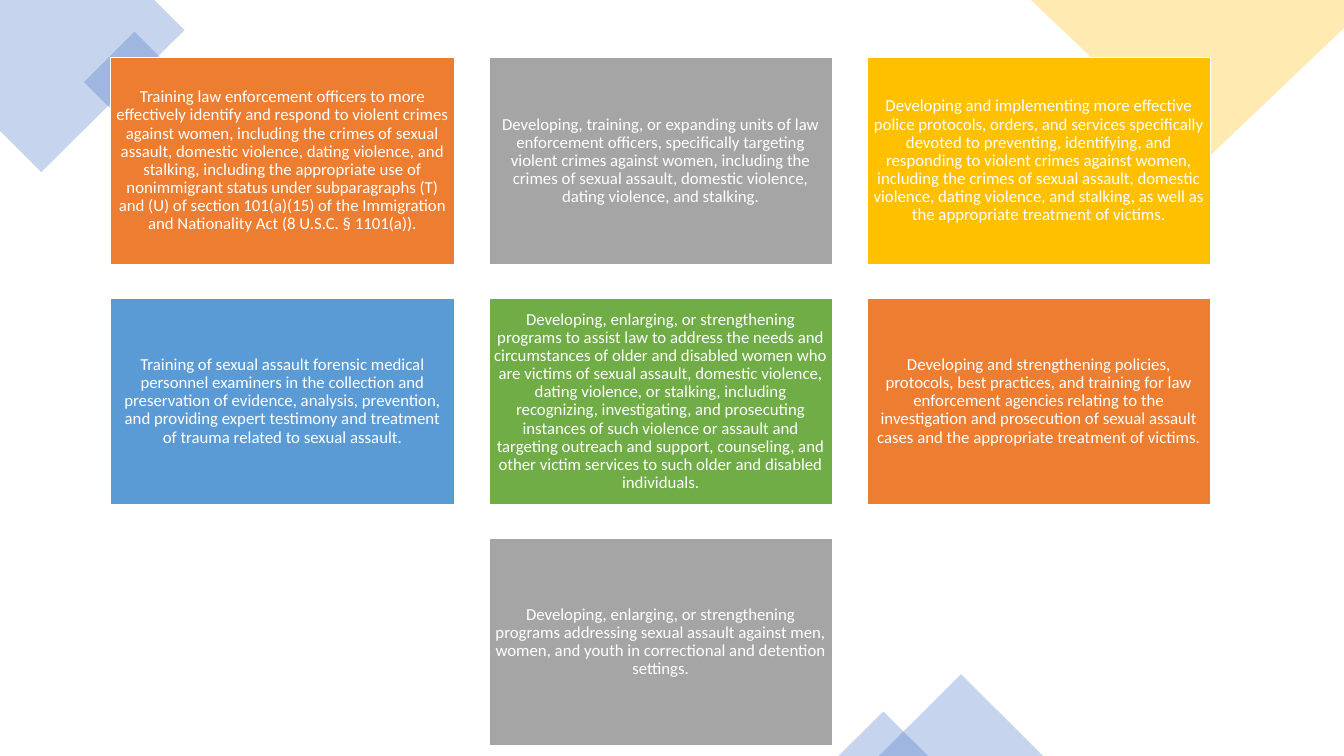
from lxml import etree
from pptx import Presentation
from pptx.dml.color import RGBColor
from pptx.enum.shapes import MSO_SHAPE
from pptx.enum.text import MSO_ANCHOR, PP_ALIGN
from pptx.oxml.ns import qn
from pptx.util import Cm, Pt


def rgb(color):
    return RGBColor.from_string(color)


def tint(sp, color):
    """Fill a decoration at 30 % opacity, without outline or shadow."""
    sp.shadow.inherit = False
    sp.fill.solid()
    sp.fill.fore_color.rgb = rgb(color)
    sp.line.fill.background()
    clr = sp.fill._xPr.find(qn("a:solidFill"))[0]
    etree.SubElement(clr, qn("a:alpha")).set("val", "30000")


prs = Presentation()
prs.slide_width, prs.slide_height = Cm(33.87), Cm(19.05)
s = prs.slides.add_slide(prs.slide_layouts[6])

# Top corners
corners = [
    ("4472C4", [(0, 0), (3.89, 0), (4.65, 0.76), (1.04, 4.34), (0, 3.3)]),
    ("FFC000", [(25.98, 0), (33.87, 0), (33.87, 0.71), (30.3, 4.11)]),
]
for color, points in corners:
    points = [(Cm(x), Cm(y)) for x, y in points]
    fb = s.shapes.build_freeform(*points[0])
    fb.add_line_segments(points[1:], close=True)
    tint(fb.convert_to_shape(), color)

# Small diamond and bottom triangles
accents = [
    (MSO_SHAPE.RECTANGLE, 2.49, 1.17, 1.8, 1.8, 315),
    (MSO_SHAPE.ISOSCELES_TRIANGLE, 22.15, 16.99, 4.14, 2.06, 0),
    (MSO_SHAPE.ISOSCELES_TRIANGLE, 21.13, 17.93, 2.26, 1.12, 0),
]
for kind, x, y, w, h, angle in accents:
    sp = s.shapes.add_shape(kind, Cm(x), Cm(y), Cm(w), Cm(h))
    sp.rotation = angle
    tint(sp, "4472C4")

# Purpose boxes: three per row, the last one centred
colors = ["ED7D31", "A5A5A5", "FFC000", "5B9BD5", "70AD47"]
purposes = [
    "Training law enforcement officers to more effectively identify and respond to "
    "violent crimes against women, including the crimes of sexual assault, domestic "
    "violence, dating violence, and stalking, including the appropriate use of "
    "nonimmigrant status under subparagraphs (T) and (U) of section 101(a)(15) of the "
    "Immigration and Nationality Act (8 U.S.C. § 1101(a)).",
    "Developing, training, or expanding units of law enforcement officers, specifically "
    "targeting violent crimes against women, including the crimes of sexual assault, "
    "domestic violence, dating violence, and stalking.",
    "Developing and implementing more effective police protocols, orders, and services "
    "specifically devoted to preventing, identifying, and responding to violent crimes "
    "against women, including the crimes of sexual assault, domestic violence, dating "
    "violence, and stalking, as well as the appropriate treatment of victims.",
    "Training of sexual assault forensic medical personnel examiners in the collection "
    "and preservation of evidence, analysis, prevention, and providing expert testimony "
    "and treatment of trauma related to sexual assault.",
    "Developing, enlarging, or strengthening programs to assist law to address the needs "
    "and circumstances of older and disabled women who are victims of sexual assault, "
    "domestic violence, dating violence, or stalking, including recognizing, "
    "investigating, and prosecuting instances of such violence or assault and targeting "
    "outreach and support, counseling, and other victim services to such older and "
    "disabled individuals.",
    "Developing and strengthening policies, protocols, best practices, and training for "
    "law enforcement agencies relating to the investigation and prosecution of sexual "
    "assault cases and the appropriate treatment of victims.",
    "Developing, enlarging, or strengthening programs addressing sexual assault against "
    "men, women, and youth in correctional and detention settings.",
]
for i, text in enumerate(purposes):
    row, col = divmod(i, 3)
    if i == len(purposes) - 1:
        col = 1
    sp = s.shapes.add_shape(MSO_SHAPE.RECTANGLE, Cm(2.79 + 9.53 * col),
                            Cm(1.45 + 6.06 * row), Cm(8.66), Cm(5.21))
    sp.shadow.inherit = False
    sp.fill.solid()
    sp.fill.fore_color.rgb = rgb(colors[i % len(colors)])
    sp.line.color.rgb = rgb("FFFFFF")
    sp.line.width = Pt(1)
    tf = sp.text_frame
    tf.word_wrap = True
    tf.vertical_anchor = MSO_ANCHOR.MIDDLE
    tf.margin_left = tf.margin_right = tf.margin_top = tf.margin_bottom = Cm(0.13)
    p = tf.paragraphs[0]
    p.alignment = PP_ALIGN.CENTER
    p.line_spacing = 0.9
    r = p.add_run()
    r.text = text
    r.font.name = "Calibri"
    r.font.size = Pt(12)
    r.font.color.rgb = rgb("FFFFFF")

prs.save("out.pptx")
